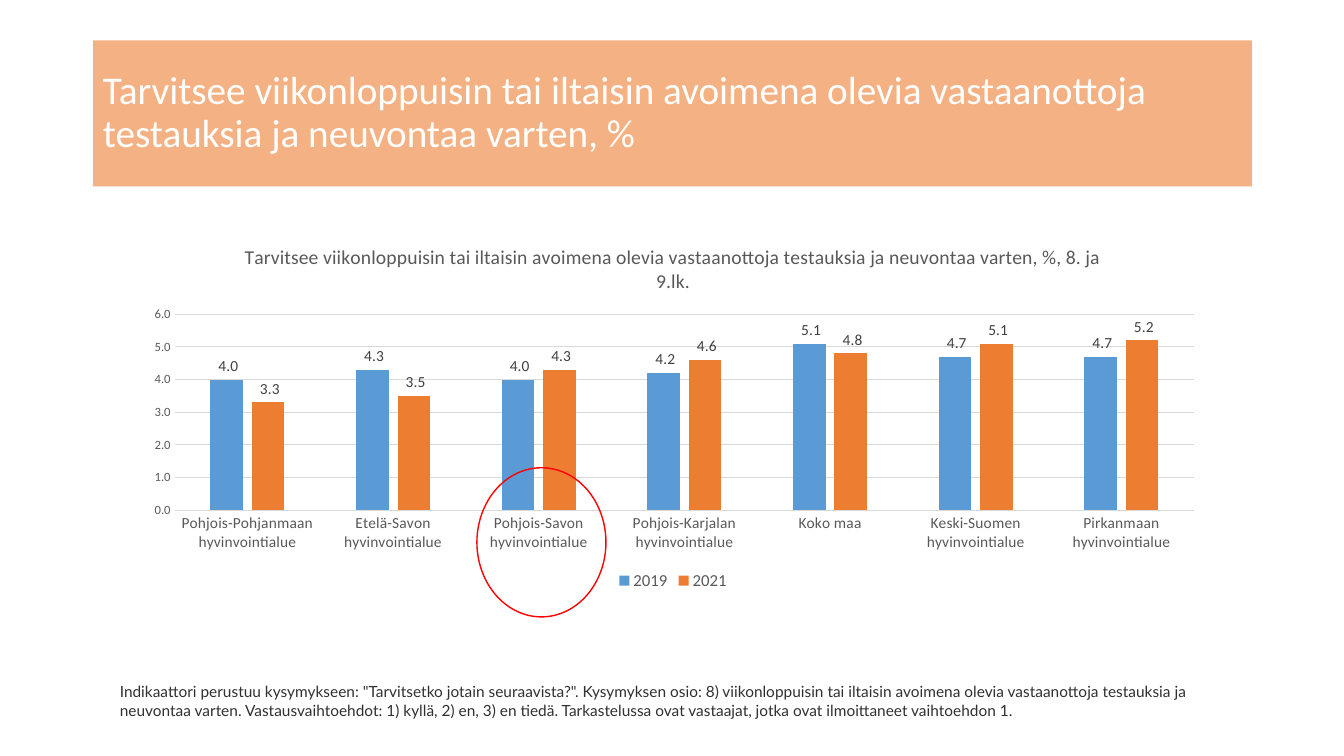
from pptx import Presentation
from pptx import util as u
from pptx.chart.data import CategoryChartData
from pptx.dml.color import RGBColor
from pptx.enum import chart as c, shapes, text

COLORS = {
    "banner": "F4B183", "white": "FFFFFF", "note": "303030", "axis": "595959",
    "label": "404040", "grid": "D9D9D9", "2019": "5B9BD5", "2021": "ED7D31",
    "highlight": "FF0000",
}
TITLE = ("Tarvitsee viikonloppuisin tai iltaisin avoimena olevia vastaanottoja "
         "testauksia ja neuvontaa varten, %")
NOTE = ('Indikaattori perustuu kysymykseen: "Tarvitsetko jotain seuraavista?". '
        "Kysymyksen osio: 8) viikonloppuisin tai iltaisin avoimena olevia "
        "vastaanottoja testauksia ja neuvontaa varten. Vastausvaihtoehdot: "
        "1) kyllä, 2) en, 3) en tiedä. Tarkastelussa ovat vastaajat, jotka ovat "
        "ilmoittaneet vaihtoehdon 1.")
REGIONS = ["Pohjois-Pohjanmaan", "Etelä-Savon", "Pohjois-Savon", "Pohjois-Karjalan",
           "Koko maa", "Keski-Suomen", "Pirkanmaan"]
CATEGORIES = [name if name == "Koko maa" else f"{name} hyvinvointialue"
              for name in REGIONS]
SHARES = {
    "2019": [4.0, 4.3, 4.0, 4.2, 5.1, 4.7, 4.7],
    "2021": [3.3, 3.5, 4.3, 4.6, 4.8, 5.1, 5.2],
}
NUMBER_FORMAT = r"#\ ##0.0"


def rgb(name):
    return RGBColor.from_string(COLORS[name])


def box(*lengths):
    return [u.Inches(length) for length in lengths]


class SlideBuilder:
    def __init__(self, presentation):
        self.slide = presentation.slides.add_slide(presentation.slide_layouts[5])

    def style_font(self, font, size, color, name="Calibri"):
        font.name, font.size, font.bold = name, u.Pt(size), False
        font.color.rgb = rgb(color)

    def style_line(self, line, color, width):
        line.color.rgb = rgb(color)
        line.width = u.Pt(width)

    def title(self, wording, *place):
        title = self.slide.shapes.title
        title.left, title.top, title.width, title.height = box(*place)
        title.fill.solid()
        title.fill.fore_color.rgb = rgb("banner")
        frame = title.text_frame
        frame.text = wording
        frame.word_wrap = True
        frame.auto_size = text.MSO_AUTO_SIZE.NONE
        frame.vertical_anchor = text.MSO_ANCHOR.MIDDLE
        paragraph = frame.paragraphs[0]
        paragraph.alignment = text.PP_ALIGN.LEFT
        paragraph.line_spacing = 0.9
        self.style_font(paragraph.font, 28, "white")

    def note(self, wording, *place):
        frame = self.slide.shapes.add_textbox(*box(*place)).text_frame
        frame.word_wrap = True
        frame.auto_size = text.MSO_AUTO_SIZE.SHAPE_TO_FIT_TEXT
        frame.text = wording
        self.style_font(frame.paragraphs[0].font, 11, "note", "Lato")

    def column_chart(self, heading, categories, series_values, *place):
        data = CategoryChartData(number_format=NUMBER_FORMAT)
        data.categories = categories
        for name, values in series_values.items():
            data.add_series(name, values)
        chart = self.slide.shapes.add_chart(
            c.XL_CHART_TYPE.COLUMN_CLUSTERED, *box(*place), data).chart
        chart.font.name, chart.font.size = "Calibri", u.Pt(10)

        chart.has_title = True
        chart.chart_title.include_in_layout = False
        chart.chart_title.text_frame.text = heading
        self.style_font(chart.chart_title.text_frame.paragraphs[0].font, 14, "axis")

        chart.has_legend = True
        chart.legend.position = c.XL_LEGEND_POSITION.BOTTOM
        chart.legend.include_in_layout = False
        self.style_font(chart.legend.font, 12, "axis")

        self.style_axes(chart.category_axis, chart.value_axis)
        plot = chart.plots[0]
        plot.gap_width, plot.overlap = 219, -27
        plot.vary_by_categories = False
        for series in plot.series:
            self.style_series(series)

    def style_axes(self, category_axis, value_axis):
        for axis, size in ((category_axis, 11), (value_axis, 9)):
            axis.major_tick_mark = axis.minor_tick_mark = c.XL_TICK_MARK.NONE
            self.style_font(axis.tick_labels.font, size, "axis")
        self.style_line(category_axis.format.line, "grid", 0.75)
        value_axis.minimum_scale, value_axis.maximum_scale = 0, 6
        value_axis.major_unit = 1
        value_axis.format.line.fill.background()
        self.style_line(value_axis.major_gridlines.format.line, "grid", 0.75)
        value_axis.tick_labels.number_format = NUMBER_FORMAT
        value_axis.tick_labels.number_format_is_linked = False

    def style_series(self, series):
        series.invert_if_negative = False
        series.format.fill.solid()
        series.format.fill.fore_color.rgb = rgb(series.name)
        labels = series.data_labels
        labels.show_value = True
        labels.position = c.XL_LABEL_POSITION.OUTSIDE_END
        labels.number_format = NUMBER_FORMAT
        labels.number_format_is_linked = False
        self.style_font(labels.font, 11, "label")

    def highlight(self, *place):
        ellipse = self.slide.shapes.add_shape(shapes.MSO_SHAPE.OVAL, *box(*place))
        ellipse.shadow.inherit = False
        ellipse.fill.background()
        self.style_line(ellipse.line, "highlight", 1)


def main():
    presentation = Presentation()
    presentation.slide_width, presentation.slide_height = box(13.33, 7.5)
    builder = SlideBuilder(presentation)
    builder.title(TITLE, 0.92, 0.4, 11.5, 1.45)
    builder.note(NOTE, 1.09, 6.72, 11.53, 0.47)
    builder.column_chart(f"{TITLE}, 8. ja 9.lk.", CATEGORIES, SHARES,
                         1.29, 2.25, 10.77, 3.65)
    builder.highlight(4.73, 4.64, 1.28, 1.48)
    presentation.save("out.pptx")


if __name__ == "__main__":
    main()
